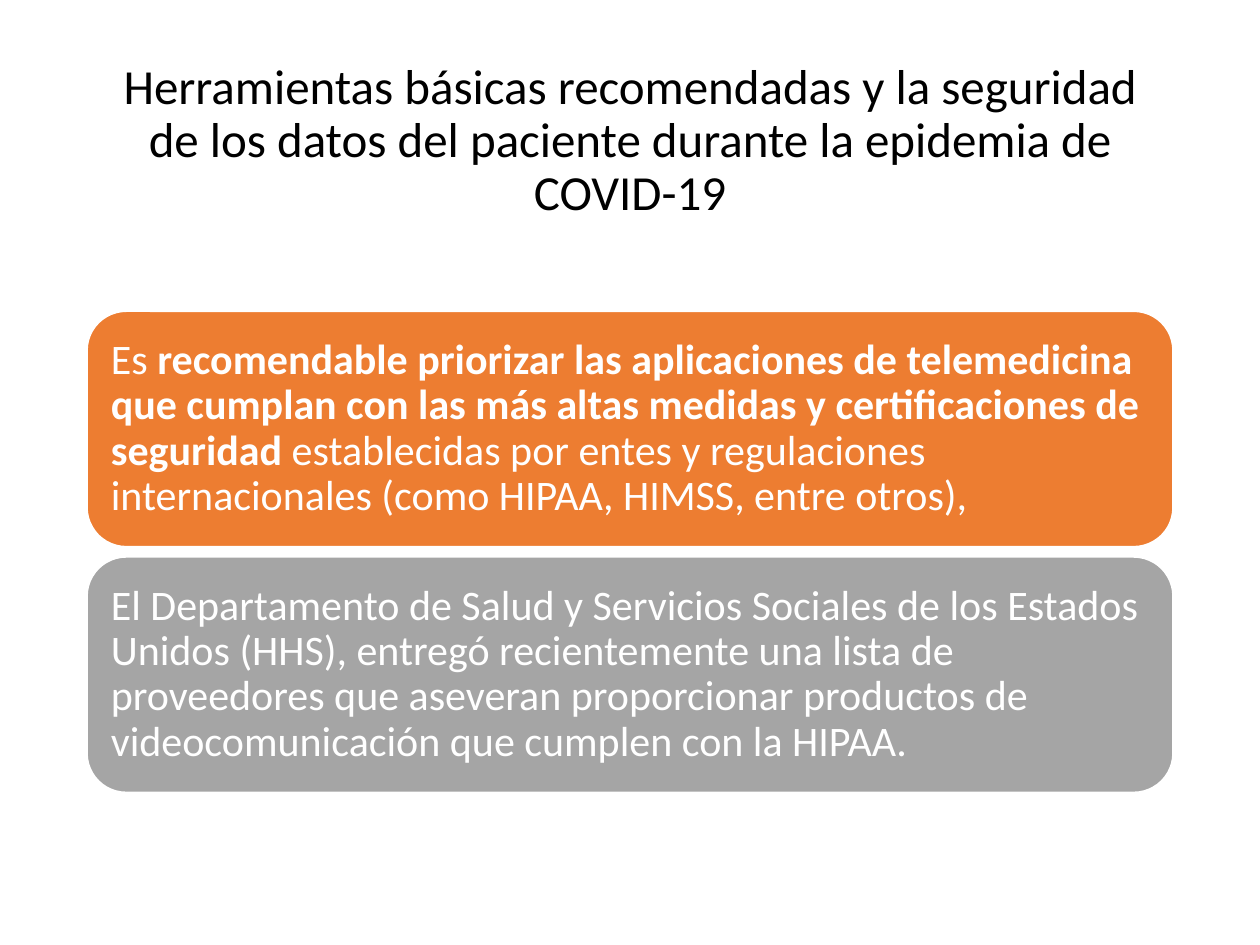
from pptx import Presentation
from pptx.dml.color import RGBColor
from pptx.enum.shapes import MSO_SHAPE
from pptx.enum.text import MSO_ANCHOR, PP_ALIGN
from pptx.util import Inches, Pt

WIDE, HIGH = Inches(10), Inches(7.5)
COL, ROW = WIDE / 100, HIGH / 100
LEFT, SPAN = 6.9, 86.2
GAP = 1.07

HEAD = [("Herramientas básicas recomendadas y la seguridad de los datos "
         "del paciente durante la epidemia de COVID-19", False)]
CARDS = [
    ("ED7D31", [
        ("Es ", False),
        ("recomendable priorizar las aplicaciones de telemedicina que cumplan "
         "con las más altas medidas y certificaciones de seguridad ", True),
        ("establecidas por entes y regulaciones internacionales "
         "(como HIPAA, HIMSS, entre otros),", False)]),
    ("A5A5A5", [
        ("El Departamento de Salud y Servicios Sociales de los Estados Unidos "
         "(HHS), entregó recientemente una lista de proveedores que aseveran "
         "proporcionar productos de videocomunicación que cumplen con la HIPAA.",
         False)]),
]


def tint(code):
    return RGBColor.from_string(code)


def apply(item, **values):
    for name, value in values.items():
        setattr(item, name, value)


def place(box):
    x, y, w, h = box
    return [round(n) for n in (x * COL, y * ROW, w * COL, h * ROW)]


def write(shape, runs, size, color, align, pad):
    frame = shape.text_frame
    apply(frame, word_wrap=True, vertical_anchor=MSO_ANCHOR.MIDDLE,
          margin_left=Inches(0.1), margin_right=Inches(0.1),
          margin_top=Inches(pad), margin_bottom=Inches(pad))
    para = frame.paragraphs[0]
    apply(para, alignment=align, line_spacing=0.9)
    for text, bold in runs:
        run = para.add_run()
        run.text = text
        apply(run.font, name="Calibri", size=Pt(size), bold=bold)
        run.font.color.rgb = tint(color)


def add_title(slide, box):
    shape = slide.shapes.add_textbox(*place(box))
    write(shape, HEAD, 28, "000000", PP_ALIGN.CENTER, 0.05)


def add_card(slide, box, fill, runs):
    shape = slide.shapes.add_shape(MSO_SHAPE.ROUNDED_RECTANGLE, *place(box))
    shape.shadow.inherit = False
    shape.fill.solid()
    shape.fill.fore_color.rgb = tint(fill)
    shape.line.color.rgb = tint("FFFFFF")
    shape.line.width = Pt(1)
    write(shape, runs, 24, "FFFFFF", PP_ALIGN.LEFT, 0.1)


def add_stack(slide, box):
    x, y, w, h = box
    tall = (h - GAP * (len(CARDS) - 1)) / len(CARDS)
    for i, (fill, runs) in enumerate(CARDS):
        add_card(slide, (x, y + i * (tall + GAP), w, tall), fill, runs)


def main():
    deck = Presentation()
    apply(deck, slide_width=WIDE, slide_height=HIGH)
    slide = deck.slides.add_slide(deck.slide_layouts[6])
    add_title(slide, (LEFT, 5.33, SPAN, 19.33))
    add_stack(slide, (LEFT, 32.93, SPAN, 50.93))
    deck.save("out.pptx")


if __name__ == "__main__":
    main()
